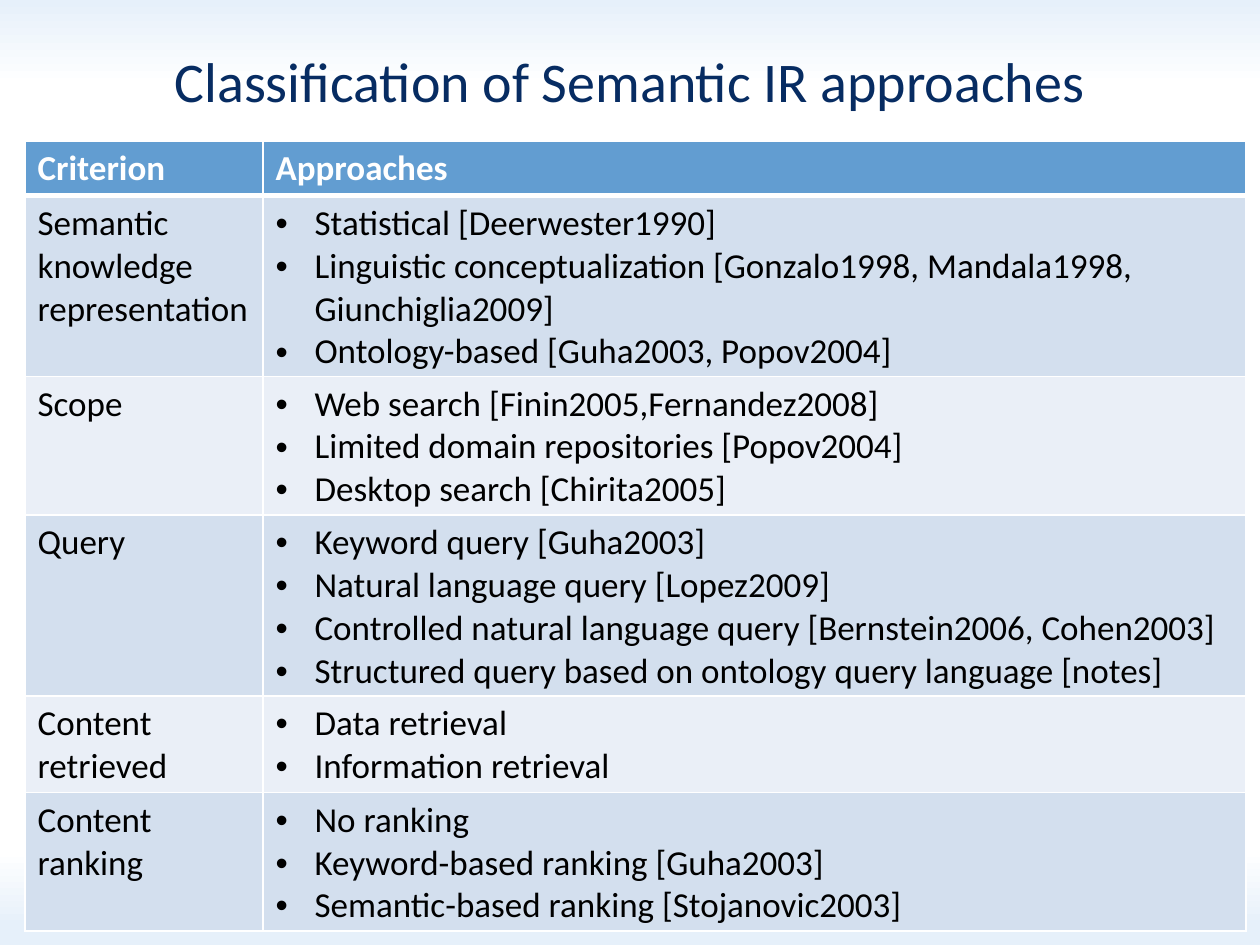
from pptx import Presentation
from pptx.dml.color import RGBColor
from pptx.enum.text import MSO_ANCHOR, PP_ALIGN
from pptx.oxml.ns import qn
from pptx.util import Pt
from lxml import etree

CENTER, MIDDLE = PP_ALIGN.CENTER, MSO_ANCHOR.MIDDLE

TITLE = "Classification of Semantic IR approaches"
HEADER = ("Criterion", "Approaches")
ROWS = [
    ("Semantic knowledge representation", [
        "Statistical [Deerwester1990]",
        "Linguistic conceptualization [Gonzalo1998, Mandala1998, Giunchiglia2009]",
        "Ontology-based [Guha2003, Popov2004]",
    ]),
    ("Scope", [
        "Web search [Finin2005,Fernandez2008]",
        "Limited domain repositories [Popov2004]",
        "Desktop search [Chirita2005]",
    ]),
    ("Query", [
        "Keyword query [Guha2003]",
        "Natural language query [Lopez2009]",
        "Controlled natural language query [Bernstein2006, Cohen2003]",
        "Structured query based on ontology query language [notes]",
    ]),
    ("Content retrieved", ["Data retrieval", "Information retrieval"]),
    ("Content ranking", [
        "No ranking",
        "Keyword-based ranking [Guha2003]",
        "Semantic-based ranking [Stojanovic2003]",
    ]),
]
THEME = {
    "font": "Calibri", "title_size": 32, "body_size": 20,
    "title": "072C62", "header": "629DD1", "bands": ("D3DFEE", "EAEFF7"),
    "white": "FFFFFF", "black": "000000",
    "sky": [(0, "E6F0FA"), (9, "FFFFFF"), (90, "FFFFFF"), (98, "E6F0FA")],
}
SLIDE = (1260, 945)
TITLE_BOX = (0, 32, 1260, 103)
TABLE_POS = (25, 141)
COLUMNS = (238, 983)
ROW_HEIGHT = 52
INDENT = 39


def px(n):
    return n * 914400 // 126


def add_node(parent, tag, **attrs):
    return etree.SubElement(parent, qn(tag), attrs)


def style(p, size, color, bold=False):
    p.font.name, p.font.size, p.font.bold = THEME["font"], Pt(size), bold
    p.font.color.rgb = RGBColor.from_string(color)


def paint_background(s):
    fill = s.background.fill
    fill.gradient()
    fill.gradient_angle = 270
    stops = s.element.find(".//" + qn("a:gsLst"))
    for stop in list(stops):
        stops.remove(stop)
    for pos, color in THEME["sky"]:
        stop = add_node(stops, "a:gs", pos=str(pos * 1000))
        add_node(stop, "a:srgbClr", val=color)


def add_bullet(p):
    pPr = p._p.get_or_add_pPr()
    pPr.set("marL", str(px(INDENT)))
    pPr.set("indent", str(-px(INDENT)))
    add_node(add_node(pPr, "a:buClr"), "a:srgbClr", val=THEME["black"])
    add_node(pPr, "a:buFont", typeface="Arial")
    add_node(pPr, "a:buChar", char="•")


def add_borders(cell, top, bottom):
    tcPr = cell._tc.get_or_add_tcPr()
    for side, width in (("L", 1), ("R", 1), ("T", top), ("B", bottom)):
        ln = add_node(tcPr, f"a:ln{side}", w=str(Pt(width)))
        add_node(add_node(ln, "a:solidFill"), "a:srgbClr", val=THEME["white"])


def fill_cell(cell, lines, fill, color, bold=False, bullets=False, top=1, bottom=1):
    add_borders(cell, top, bottom)
    cell.fill.solid()
    cell.fill.fore_color.rgb = RGBColor.from_string(fill)
    tf = cell.text_frame
    for i, line in enumerate(lines):
        p = tf.add_paragraph() if i else tf.paragraphs[0]
        p.text = line
        if bullets:
            add_bullet(p)
        style(p, THEME["body_size"], color, bold)


def add_title(s):
    tf = s.shapes.add_textbox(*map(px, TITLE_BOX)).text_frame
    tf.word_wrap = True
    tf.vertical_anchor = MIDDLE
    tf.margin_left = tf.margin_right = tf.margin_top = tf.margin_bottom = 0
    p = tf.paragraphs[0]
    p.text, p.alignment, p.line_spacing = TITLE, CENTER, 0.93
    style(p, THEME["title_size"], THEME["title"])


def add_criteria_table(s):
    count = len(ROWS) + 1
    size = (sum(COLUMNS), ROW_HEIGHT * count)
    table = s.shapes.add_table(count, len(COLUMNS), *map(px, TABLE_POS + size)).table
    for column, width in zip(table.columns, COLUMNS):
        column.width = px(width)
    for c, text in enumerate(HEADER):
        fill_cell(table.cell(0, c), [text], THEME["header"], THEME["white"], bold=True, bottom=3)
    for r, (criterion, approaches) in enumerate(ROWS, 1):
        band = THEME["bands"][(r - 1) % 2]
        top = 3 if r == 1 else 1
        fill_cell(table.cell(r, 0), [criterion], band, THEME["black"], top=top)
        fill_cell(table.cell(r, 1), approaches, band, THEME["black"], bullets=True, top=top)


def main():
    prs = Presentation()
    prs.slide_width, prs.slide_height = map(px, SLIDE)
    s = prs.slides.add_slide(prs.slide_layouts[6])
    paint_background(s)
    add_title(s)
    add_criteria_table(s)
    prs.save("out.pptx")


if __name__ == "__main__":
    main()
